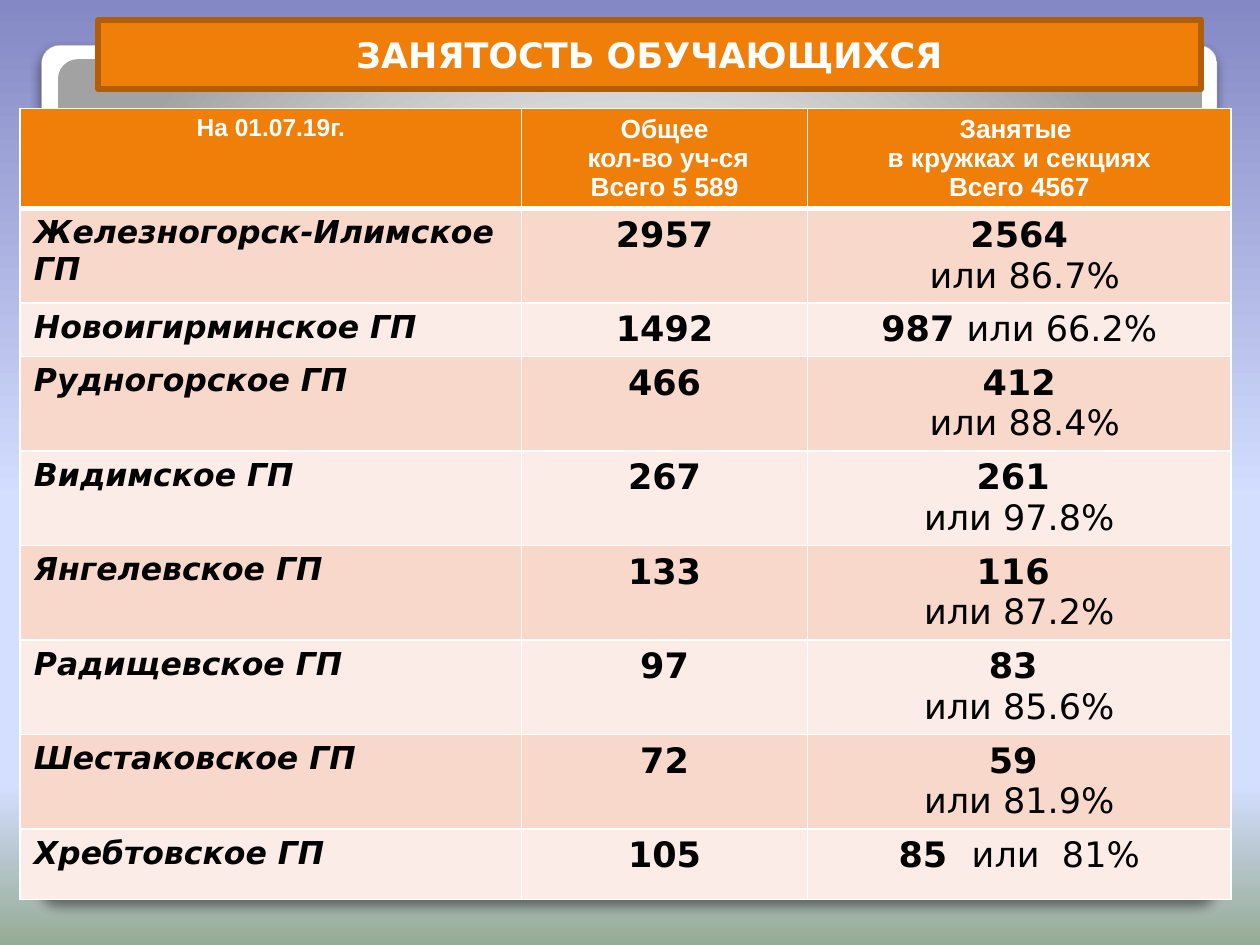
from dataclasses import dataclass
from typing import Optional

from lxml.etree import SubElement
from pptx import Presentation
from pptx.dml.color import RGBColor
from pptx.enum.shapes import MSO_SHAPE
from pptx.enum.text import MSO_ANCHOR, PP_ALIGN
from pptx.oxml.ns import qn
from pptx.util import Inches, Pt

COLORS = {
    "orange": "F07F09", "rust": "B25E07", "white": "FFFFFF", "black": "000000",
    "band_dark": "F9D8CC", "band_light": "FCECE7", "edge": "A4A4A4",
}
SKY = [(0, "8488C4"), (53, "D4DEFF"), (83, "D4DEFF"), (100, "96AB94")]
FRAME = [(0, "FFFFFF"), (98, "FFFFFF"), (99, "F7F7F7"), (100, "DADADA")]
GLOSS = [(0, "FFFFFF"), (55, "E1E1E1"), (100, "A2A2A2")]
GLOSS_CENTRE = {"l": 50, "t": 175, "r": 50, "b": -75}

TITLE_FONT = {"name": "DejaVu Sans", "size": Pt(20), "bold": True}
DATE_FONT = {"name": "Arial", "size": Pt(14), "bold": True}
HEAD_FONT = {"name": "Arial", "size": Pt(15), "bold": True}
PLACE_FONT = {"name": "DejaVu Sans", "size": Pt(18), "bold": True, "italic": True}
COUNT_FONT = {"name": "DejaVu Sans", "size": Pt(20), "bold": True}
SHARE_FONT = {**COUNT_FONT, "bold": False}


@dataclass
class Panel:
    left: float
    top: float
    width: float
    height: float
    radius: float
    framed: bool


@dataclass
class Settlement:
    name: str
    pupils: str
    busy: str
    share: str
    height: float = 0.75
    one_line: bool = False


FRAME_PANEL = Panel(0.33, 0.36, 9.33, 6.78, 0.021, True)
PANELS = [
    FRAME_PANEL,
    Panel(0.46, 0.47, 9.08, 6, 0.021, False),
    FRAME_PANEL,
    Panel(0.46, 0.47, 9.08, 3.4, 0.046, False),
]
HEADERS = [
    (["На 01.07.19г."], DATE_FONT, MSO_ANCHOR.TOP),
    (["Общее", " кол-во уч-ся", "Всего 5 589"], HEAD_FONT, MSO_ANCHOR.MIDDLE),
    (["Занятые ", "в кружках и секциях", "Всего 4567"], HEAD_FONT, MSO_ANCHOR.MIDDLE),
]
SETTLEMENTS = [
    Settlement("Железногорск-Илимское ГП", "2957", "2564", " или 86.7%"),
    Settlement("Новоигирминское ГП", "1492", "987 ", "или 66.2%", 0.42, True),
    Settlement("Рудногорское ГП", "466", "412", " или 88.4%"),
    Settlement("Видимское ГП", "267", "261 ", "или 97.8%"),
    Settlement("Янгелевское ГП", "133", "116 ", "или 87.2%"),
    Settlement("Радищевское ГП", "97", "83 ", "или 85.6%"),
    Settlement("Шестаковское ГП", "72", "59 ", "или 81.9%"),
    Settlement("Хребтовское ГП", "105", "85  ", "или  81%", 0.56, True),
]
COLUMNS = [3.98, 2.27, 3.36]
HEADER_HEIGHT = 0.78


def rgb(name: str) -> RGBColor:
    return RGBColor.from_string(COLORS[name])


def set_gradient(owner, fill, stops: list, centre: Optional[dict] = None) -> None:
    """Fill with stops given in percent: top to bottom, or round a centre."""
    fill.gradient()
    grad = owner.element.find(".//" + qn("a:gradFill"))
    for child in list(grad):
        grad.remove(child)
    stop_list = SubElement(grad, qn("a:gsLst"))
    for pos, color in stops:
        gs = SubElement(stop_list, qn("a:gs"), pos=str(pos * 1000))
        SubElement(gs, qn("a:srgbClr"), val=color)
    if centre:
        path = SubElement(grad, qn("a:path"), {"path": "circle"})
        rect = {side: str(value * 1000) for side, value in centre.items()}
        SubElement(path, qn("a:fillToRect"), rect)
    else:
        SubElement(grad, qn("a:lin"), ang="5400000", scaled="0")


def add_panel(s, panel: Panel) -> None:
    sp = s.shapes.add_shape(
        MSO_SHAPE.ROUNDED_RECTANGLE, Inches(panel.left), Inches(panel.top),
        Inches(panel.width), Inches(panel.height))
    sp.adjustments[0] = panel.radius
    sp.shadow.inherit = False
    if not panel.framed:
        sp.line.fill.background()
        set_gradient(sp, sp.fill, GLOSS, GLOSS_CENTRE)
        return
    set_gradient(sp, sp.fill, FRAME)
    sp.line.color.rgb = rgb("edge")
    sp.line.width = Pt(0.16)
    effects = sp.element.spPr.find(qn("a:effectLst"))
    shadow = SubElement(effects, qn("a:outerShdw"), blurRad=str(Pt(6)),
                        dist=str(Pt(4)), dir="5400000", rotWithShape="0")
    color = SubElement(shadow, qn("a:srgbClr"), val=COLORS["black"])
    SubElement(color, qn("a:alpha"), val="25000")


def write(tf, lines: list, color: str, align=PP_ALIGN.CENTER) -> None:
    """Write one paragraph per line; a line is a list of (text, font) runs."""
    for i, runs in enumerate(lines):
        p = tf.paragraphs[0] if i == 0 else tf.add_paragraph()
        p.alignment = align
        for text, font in runs:
            r = p.add_run()
            r.text = text
            for attr, value in font.items():
                setattr(r.font, attr, value)
            r.font.color.rgb = rgb(color)


def style_cell(cell, fill: str, top: float = 1, bottom: float = 1) -> None:
    """Fill a cell and give it white borders, widths in points."""
    cell.fill.solid()
    cell.fill.fore_color.rgb = rgb(fill)
    tc_pr = cell._tc.get_or_add_tcPr()
    widths = {"lnL": 1, "lnR": 1, "lnT": top, "lnB": bottom}
    for i, (side, width) in enumerate(widths.items()):
        ln = SubElement(tc_pr, qn("a:" + side), w=str(Pt(width)))
        solid = SubElement(ln, qn("a:solidFill"))
        SubElement(solid, qn("a:srgbClr"), val=COLORS["white"])
        tc_pr.insert(i, ln)


def add_busy_table(s) -> None:
    heights = [HEADER_HEIGHT] + [item.height for item in SETTLEMENTS]
    table = s.shapes.add_table(
        len(heights), len(COLUMNS), Inches(0.16), Inches(0.86),
        Inches(sum(COLUMNS)), Inches(sum(heights))).table
    for column, width in zip(table.columns, COLUMNS):
        column.width = Inches(width)
    for row, height in zip(table.rows, heights):
        row.height = Inches(height)

    for col, (lines, font, anchor) in enumerate(HEADERS):
        cell = table.cell(0, col)
        style_cell(cell, "orange", bottom=3)
        cell.vertical_anchor = anchor
        write(cell.text_frame, [[(line, font)] for line in lines], "white")

    for row, item in enumerate(SETTLEMENTS, start=1):
        busy, share = (item.busy, COUNT_FONT), (item.share, SHARE_FONT)
        contents = [
            [[(item.name, PLACE_FONT)]],
            [[(item.pupils, COUNT_FONT)]],
            [[busy, share]] if item.one_line else [[busy], [share]],
        ]
        for col, lines in enumerate(contents):
            cell = table.cell(row, col)
            style_cell(cell, "band_dark" if row % 2 else "band_light",
                       top=3 if row == 1 else 1)
            if col == 0:
                cell.margin_left = cell.margin_right = Inches(0.11)
            write(cell.text_frame, lines, "black",
                  PP_ALIGN.LEFT if col == 0 else PP_ALIGN.CENTER)


def add_title(s) -> None:
    sp = s.shapes.add_shape(MSO_SHAPE.RECTANGLE, Inches(0.78), Inches(0.16),
                            Inches(8.75), Inches(0.55))
    sp.shadow.inherit = False
    sp.fill.solid()
    sp.fill.fore_color.rgb = rgb("orange")
    sp.line.color.rgb = rgb("rust")
    sp.line.width = Pt(3.35)
    tf = sp.text_frame
    tf.word_wrap = True
    tf.vertical_anchor = MSO_ANCHOR.MIDDLE
    write(tf, [[("ЗАНЯТОСТЬ ОБУЧАЮЩИХСЯ", TITLE_FONT)]], "white")


def main() -> None:
    prs = Presentation()
    prs.slide_width, prs.slide_height = Inches(10), Inches(7.5)
    s = prs.slides.add_slide(prs.slide_layouts[6])
    set_gradient(s, s.background.fill, SKY)
    for panel in PANELS:
        add_panel(s, panel)
    add_busy_table(s)
    add_title(s)
    prs.save("out.pptx")


if __name__ == "__main__":
    main()
